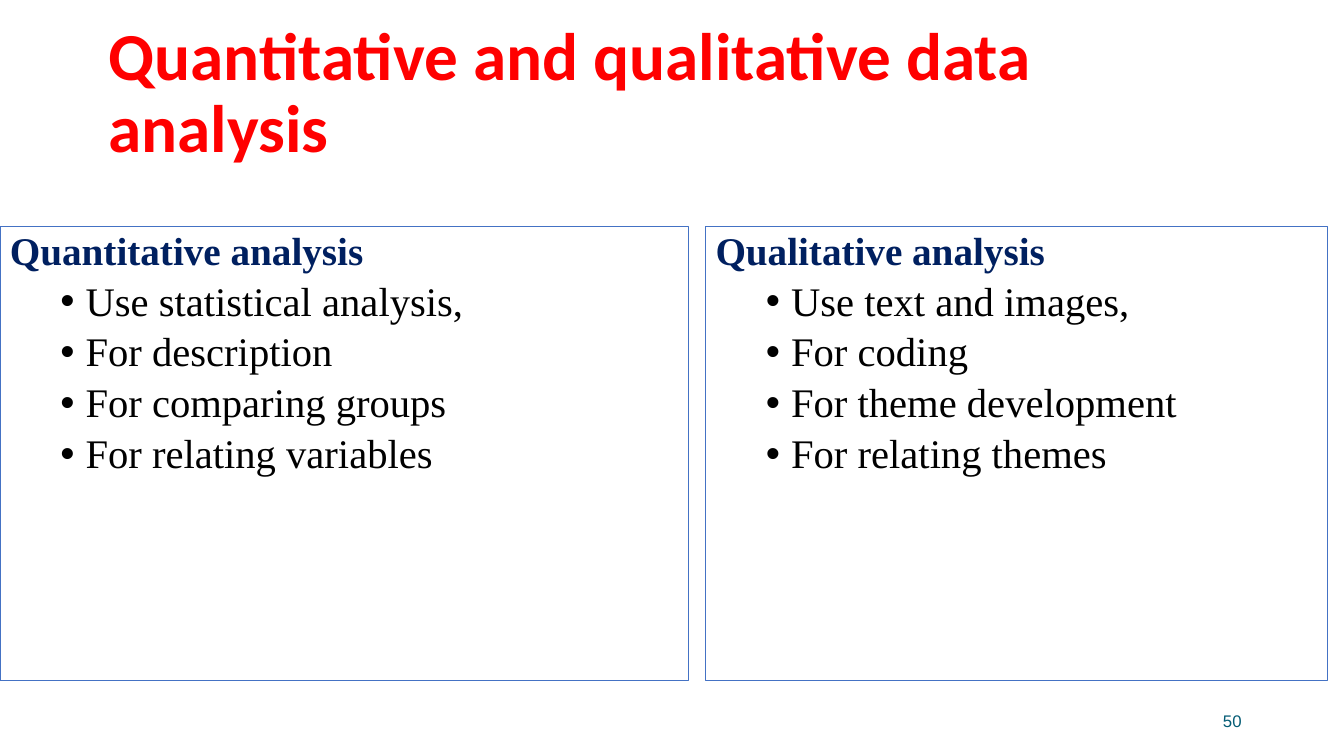
from dataclasses import dataclass

from lxml.etree import SubElement
from pptx import Presentation
from pptx.dml.color import RGBColor as Color
from pptx.enum.shapes import MSO_SHAPE as Shape
from pptx.enum.text import MSO_ANCHOR as Anchor, PP_ALIGN as Align
from pptx.oxml.ns import qn
from pptx.util import Pt


@dataclass(frozen=True)
class Theme:
    """Colours, fonts and type sizes of the deck."""
    title_color: str = "FF0000"
    heading_color: str = "002060"
    body_color: str = "000000"
    border_color: str = "4472C4"
    number_color: str = "045C75"
    title_font: str = "Calibri"
    body_font: str = "Times New Roman"
    number_font: str = "Arial"
    title_size: int = 48
    heading_size: int = 28
    body_size: int = 29
    number_size: int = 12


class PageBuilder:
    """Draws styled elements on one page."""

    def __init__(self, page, theme):
        self.page = page
        self.theme = theme

    def style(self, para, font, size, color, bold=False):
        """Format every run of a paragraph."""
        for span in para.runs:
            span.font.name = font
            span.font.size = Pt(size)
            span.font.bold = bold
            span.font.color.rgb = Color.from_string(color)

    def text(self, place, words):
        """Add a vertically centred text box and return its paragraph."""
        box = self.page.shapes.add_textbox(*map(Pt, place))
        frame = box.text_frame
        frame.word_wrap = True
        frame.vertical_anchor = Anchor.MIDDLE
        frame.text = words
        return frame.paragraphs[0]

    def title(self, place, words):
        """Add the page title."""
        para = self.text(place, words)
        para.line_spacing = 0.9
        self.style(para, self.theme.title_font, self.theme.title_size,
                   self.theme.title_color, bold=True)

    def number(self, place, words):
        """Add the page number."""
        para = self.text(place, words)
        para.alignment = Align.RIGHT
        self.style(para, self.theme.number_font, self.theme.number_size,
                   self.theme.number_color)

    def bullet(self, para):
        """Give a paragraph a hanging round bullet."""
        properties = para._p.get_or_add_pPr()
        properties.set("marL", str(Pt(54)))
        properties.set("indent", str(Pt(-18)))
        SubElement(properties, qn("a:buFont")).set("typeface", "Arial")
        SubElement(properties, qn("a:buChar")).set("char", "•")

    def panel(self, place, heading, points):
        """Add an outlined panel with a heading and bullet points."""
        box = self.page.shapes.add_shape(Shape.RECTANGLE, *map(Pt, place))
        box.shadow.inherit = False
        box.fill.background()
        box.line.color.rgb = Color.from_string(self.theme.border_color)
        box.line.width = Pt(0.75)
        frame = box.text_frame
        frame.word_wrap = True
        frame.vertical_anchor = Anchor.TOP
        frame.text = "\n".join([heading, *points])
        for para in frame.paragraphs:
            para.alignment = Align.LEFT
            para.line_spacing = 0.9
            para.space_before = Pt(5)
            self.style(para, self.theme.body_font, self.theme.body_size,
                       self.theme.body_color)
        first, *rest = frame.paragraphs
        first.space_before = Pt(10)
        self.style(first, self.theme.body_font, self.theme.heading_size,
                   self.theme.heading_color, bold=True)
        for para in rest:
            para.level = 1
            self.bullet(para)


def main():
    """Build and save the deck."""
    deck = Presentation()
    deck.slide_width, deck.slide_height = Pt(960), Pt(540)
    builder = PageBuilder(deck.slides.add_slide(deck.slide_layouts[6]), Theme())
    builder.number((678, 500.4, 216, 28.8), "50")
    builder.title((70.56, 33.1, 801.4, 69.1),
                  "Quantitative and qualitative data analysis")
    builder.panel((504, 162, 444, 324), "Qualitative analysis",
                  ["Use text and images,", "For coding",
                   "For theme development", "For relating themes"])
    builder.panel((0, 162, 492, 324), "Quantitative analysis",
                  ["Use statistical analysis,", "For description",
                   "For comparing groups", "For relating variables"])
    deck.save("out.pptx")


if __name__ == "__main__":
    main()
